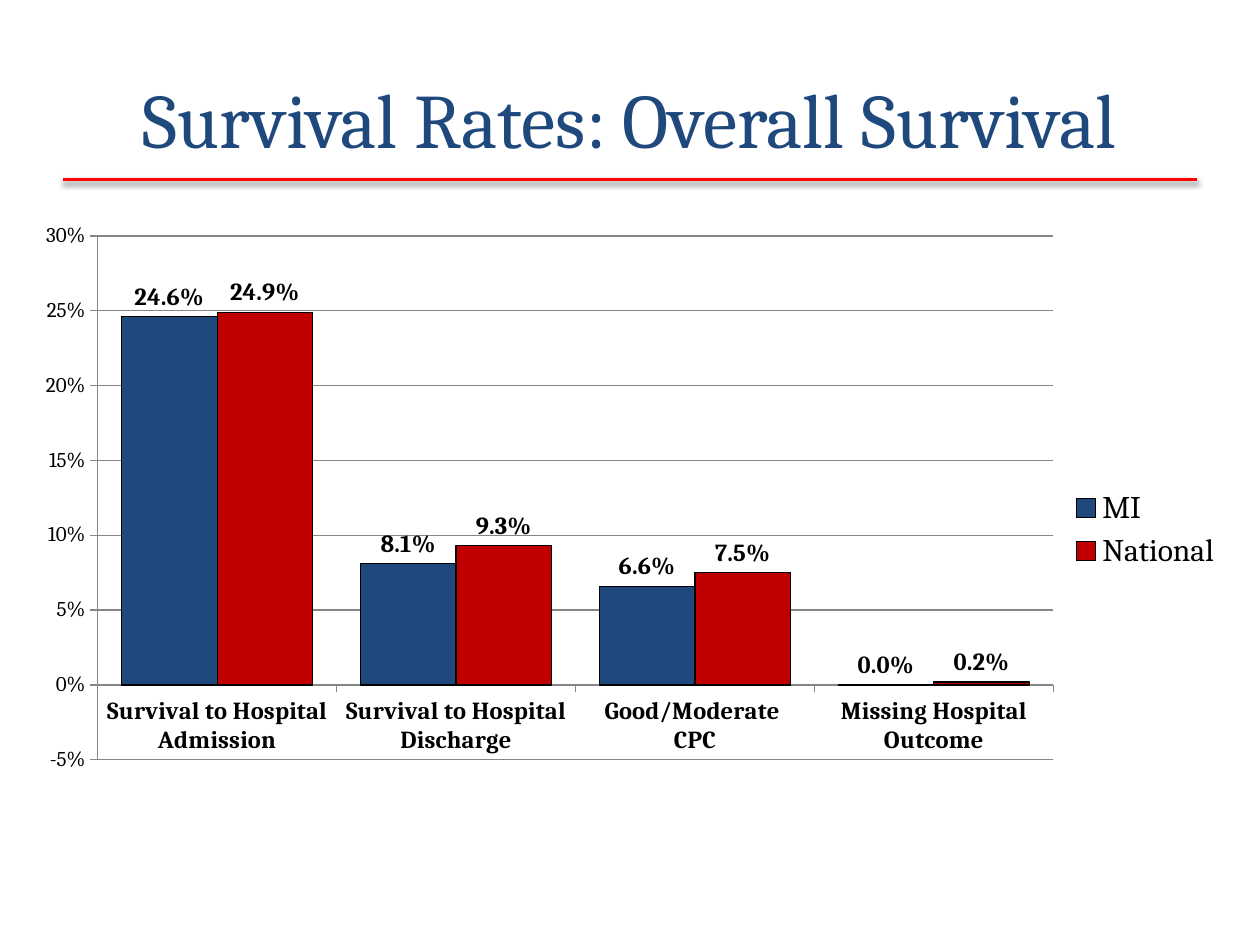
from pptx import Presentation
from pptx.chart.data import CategoryChartData
from pptx.dml.color import RGBColor
from pptx.enum.chart import (XL_CHART_TYPE, XL_LABEL_POSITION,
                             XL_LEGEND_POSITION, XL_TICK_MARK)
from pptx.enum.shapes import MSO_CONNECTOR
from pptx.enum.text import MSO_ANCHOR, PP_ALIGN
from pptx.oxml import parse_xml
from pptx.oxml.ns import nsdecls, qn
from pptx.util import Inches, Pt

NAVY = RGBColor(0x1F, 0x49, 0x7D)
CRIMSON = RGBColor(0xC0, 0x00, 0x00)
RED = RGBColor(0xFF, 0x00, 0x00)
BLACK = RGBColor(0x00, 0x00, 0x00)
GREY = RGBColor(0x86, 0x86, 0x86)

CLUSTERED = XL_CHART_TYPE.COLUMN_CLUSTERED
OUTSIDE_END = XL_LABEL_POSITION.OUTSIDE_END
LEGEND_RIGHT = XL_LEGEND_POSITION.RIGHT
TICK_OUT = XL_TICK_MARK.OUTSIDE
STRAIGHT = MSO_CONNECTOR.STRAIGHT
MIDDLE = MSO_ANCHOR.MIDDLE
CENTER = PP_ALIGN.CENTER

CATEGORIES = ["Survival to Hospital Admission", "Survival to Hospital Discharge",
              "Good/Moderate \nCPC", "Missing Hospital Outcome"]
RATES = {"MI": (NAVY, [0.246, 0.081, 0.066, 0]),
         "National": (CRIMSON, [0.249, 0.093, 0.075, 0.002])}
PLOT_AREA = {"x": 0.06, "y": 0.03, "w": 0.79, "h": 0.84}


def format_font(font, size, color=BLACK, bold=False, name="Cambria"):
    font.name, font.size, font.bold = name, Pt(size), bold
    font.color.rgb = color


def write_text(frame, text, align=CENTER, **font_format):
    paragraph = frame.paragraphs[0]
    paragraph.alignment = align
    run = paragraph.add_run()
    run.text = text
    format_font(run.font, **font_format)


class SlideBuilder:
    """Places elements on one slide; lengths are shares of the slide's size."""

    def __init__(self, deck):
        self.width, self.height = deck.slide_width, deck.slide_height
        self.slide = deck.slides.add_slide(deck.slide_layouts[6])

    def place(self, left, top, width, height):
        return (int(left * self.width), int(top * self.height),
                int(width * self.width), int(height * self.height))

    def title(self, text, box):
        frame = self.slide.shapes.add_textbox(*self.place(*box)).text_frame
        frame.word_wrap = True
        frame.vertical_anchor = MIDDLE
        write_text(frame, text, size=44, color=NAVY)

    def rule(self, left, right, y):
        x1, y1, x2, y2 = self.place(left, y, right, y)
        rule = self.slide.shapes.add_connector(STRAIGHT, x1, y1, x2, y2)
        rule.line.color.rgb = RED
        rule.line.width = Pt(2)
        rule._element.spPr.append(parse_xml(
            f'<a:effectLst {nsdecls("a")}><a:outerShdw blurRad="{Pt(3.1)}" '
            f'dist="{Pt(1.6)}" dir="5400000" rotWithShape="0">'
            '<a:srgbClr val="000000"><a:alpha val="38000"/></a:srgbClr>'
            '</a:outerShdw></a:effectLst>'))

    def column_chart(self, categories, rates, box):
        data = CategoryChartData(number_format="0.0%")
        data.categories = categories
        for name, (_, values) in rates.items():
            data.add_series(name, values)
        chart = self.slide.shapes.add_chart(
            CLUSTERED, *self.place(*box), data).chart
        format_font(chart.font, 18)
        chart.has_title = False
        chart.has_legend = True
        chart.legend.position = LEGEND_RIGHT
        chart.legend.include_in_layout = False
        format_font(chart.legend.font, 18)
        self.style_axes(chart)
        self.style_columns(chart.plots[0], rates)
        self.fix_plot_area(chart, **PLOT_AREA)

    def style_axes(self, chart):
        rate_axis = chart.value_axis
        rate_axis.minimum_scale, rate_axis.maximum_scale = -0.05, 0.3
        rate_axis.major_unit = 0.05
        rate_axis.has_major_gridlines = True
        rate_axis.tick_labels.number_format = "0%"
        rate_axis.tick_labels.number_format_is_linked = False
        format_font(rate_axis.tick_labels.font, 12)
        format_font(chart.category_axis.tick_labels.font, 14, bold=True)
        for axis in (rate_axis, chart.category_axis):
            axis.major_tick_mark = TICK_OUT
        for line in (rate_axis.format.line, chart.category_axis.format.line,
                     rate_axis.major_gridlines.format.line):
            line.color.rgb = GREY
            line.width = Pt(0.75)

    def style_columns(self, plot, rates):
        plot.gap_width, plot.overlap = 50, 0
        plot.vary_by_categories = False
        for series, (color, _) in zip(plot.series, rates.values()):
            series.invert_if_negative = False
            series.format.fill.solid()
            series.format.fill.fore_color.rgb = color
            series.format.line.color.rgb = BLACK
            series.format.line.width = Pt(0.75)
            labels = series.data_labels
            labels.show_value = True
            labels.position = OUTSIDE_END
            labels.number_format = "0.0%"
            labels.number_format_is_linked = False
            format_font(labels.font, 14, bold=True)

    def fix_plot_area(self, chart, **shares):
        """Pin the inner plot area to shares of the chart's frame."""
        area = chart._chartSpace.chart.plotArea
        for layout in area.findall(qn("c:layout")):
            area.remove(layout)
        modes = "".join(f'<c:{side}Mode val="edge"/>' for side in "xy")
        sizes = "".join(f'<c:{key} val="{share}"/>' for key, share in shares.items())
        area.insert(0, parse_xml(
            f'<c:layout {nsdecls("c")}><c:manualLayout>'
            f'<c:layoutTarget val="inner"/>{modes}{sizes}'
            '</c:manualLayout></c:layout>'))


def main():
    deck = Presentation()
    deck.slide_width, deck.slide_height = Inches(10), Inches(7.5)
    builder = SlideBuilder(deck)
    builder.rule(0.05, 0.95, 0.19)
    builder.title("Survival Rates: Overall Survival", (0.05, 0.04, 0.9, 0.17))
    builder.column_chart(CATEGORIES, RATES, (0.02, 0.23, 0.96, 0.66))
    deck.save("out.pptx")


if __name__ == "__main__":
    main()
